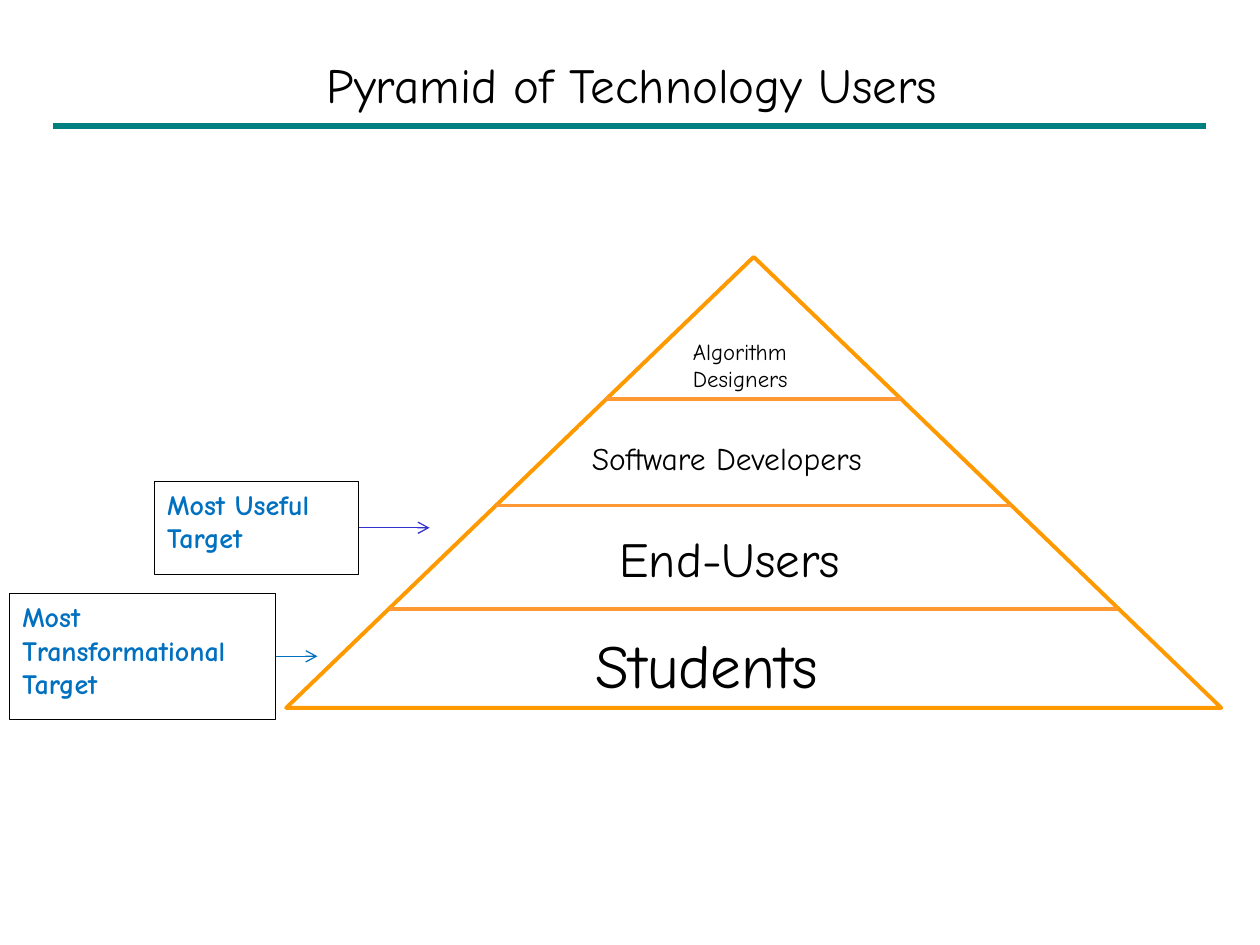
from dataclasses import dataclass

from lxml.etree import SubElement
from pptx import Presentation
from pptx.dml.color import RGBColor
from pptx.enum.shapes import MSO_CONNECTOR, MSO_SHAPE
from pptx.enum.text import MSO_ANCHOR, MSO_AUTO_SIZE, PP_ALIGN
from pptx.oxml.ns import qn
from pptx.util import Cm, Pt


@dataclass(frozen=True)
class Theme:
    font: str = "Comic Neue"
    white: str = "FFFFFF"
    black: str = "000000"
    rule: str = "008080"
    pyramid: str = "FF9900"
    divider: str = "FF9933"
    callout: str = "0070C0"
    useful_arrow: str = "3333CC"
    title_size: float = 28
    callout_size: float = 16


THEME = Theme()

# Pyramid geometry in centimetres
LEFT, TOP, WIDTH, HEIGHT = 5.77, 5.18, 18.85, 9.09
DIVIDER_LEVELS = (8.05, 10.19, 12.27)

# Paragraphs, type size, box (left, top, width, height)
TIERS = (
    (("Students",), 35, (11.76, 12.52, 6.22, 1.47)),
    (("End-Users",), 28, (12.24, 10.52, 5.87, 1.8)),
    (("Algorithm", "Designers"), 13, (13.72, 6.68, 2.64, 1.65)),
    (("Software Developers",), 18, (11.68, 8.61, 6.91, 1.57)),
)

# Text, box, arrow tip, arrow colour
CALLOUTS = (
    ("Most Useful Target", (3.12, 9.7, 4.11, 1.88), 8.66, THEME.useful_arrow),
    ("Most Transformational Target", (0.2, 11.96, 5.36, 2.54), 6.4, THEME.callout),
)


def add_run(paragraph, text, size, color=THEME.black, bold=False):
    run = paragraph.add_run()
    run.text = text
    run.font.name = THEME.font
    run.font.size = Pt(size)
    run.font.bold = bold
    run.font.color.rgb = RGBColor.from_string(color)


def add_outline(slide, preset, box, color, width):
    """Add a white preset shape with a coloured outline."""
    shape = slide.shapes.add_shape(preset, *map(Cm, box))
    shape.shadow.inherit = False
    shape.fill.solid()
    shape.fill.fore_color.rgb = RGBColor.from_string(THEME.white)
    shape.line.color.rgb = RGBColor.from_string(color)
    shape.line.width = Pt(width)
    return shape


def add_box(slide, box, border, lines, size, color=THEME.black, bold=False):
    shape = add_outline(slide, MSO_SHAPE.RECTANGLE, box, border, 0.5)
    frame = shape.text_frame
    frame.word_wrap = True
    frame.vertical_anchor = MSO_ANCHOR.TOP
    for index, line in enumerate(lines):
        paragraph = frame.add_paragraph() if index else frame.paragraphs[0]
        paragraph.alignment = PP_ALIGN.LEFT
        add_run(paragraph, line, size, color, bold)
    return shape


def add_line(slide, start, end, color, width):
    line = slide.shapes.add_connector(MSO_CONNECTOR.STRAIGHT, *map(Cm, start + end))
    line.line.color.rgb = RGBColor.from_string(color)
    line.line.width = Pt(width)
    SubElement(line._element.spPr, qn("a:effectLst"))
    return line


def add_title(slide, text):
    title = slide.shapes.title
    title.left, title.top, title.width, title.height = map(Cm, (0.99, 0.84, 23.5, 1.7))
    frame = title.text_frame
    frame.word_wrap = True
    frame.auto_size = MSO_AUTO_SIZE.NONE
    frame.vertical_anchor = MSO_ANCHOR.MIDDLE
    frame.paragraphs[0].alignment = PP_ALIGN.CENTER
    add_run(frame.paragraphs[0], text, THEME.title_size)


def add_pyramid(slide):
    add_outline(slide, MSO_SHAPE.ISOSCELES_TRIANGLE, (LEFT, TOP, WIDTH, HEIGHT),
                THEME.pyramid, 2.25)
    for lines, size, box in TIERS:
        label = add_box(slide, box, THEME.white, lines, size)
    developers = label.text_frame.paragraphs[0]
    developers.line_spacing = 1.15
    developers.space_after = Pt(10)

    apex = LEFT + WIDTH / 2
    for level in DIVIDER_LEVELS:
        reach = WIDTH / 2 * (level - TOP) / HEIGHT
        add_line(slide, (apex - reach, level), (apex + reach, level), THEME.divider, 2.25)


def add_callout(slide, text, box, tip, arrow_color):
    callout = add_box(slide, box, THEME.black, (text,), THEME.callout_size,
                      THEME.callout, bold=True)
    left, top, width, height = box
    middle = top + height / 2
    arrow = add_line(slide, (left + width, middle), (tip, middle), arrow_color, 0.75)
    arrow.begin_connect(callout, 3)
    SubElement(arrow.line._get_or_add_ln(), qn("a:tailEnd"), type="arrow")


def main():
    presentation = Presentation()
    presentation.slide_width, presentation.slide_height = Cm(25.4), Cm(19.05)
    slide = presentation.slides.add_slide(presentation.slide_layouts[5])
    add_title(slide, "Pyramid of Technology Users")
    add_line(slide, (1.07, 2.54), (24.31, 2.54), THEME.rule, 4)
    add_pyramid(slide)
    for callout in CALLOUTS:
        add_callout(slide, *callout)
    presentation.save("out.pptx")


if __name__ == "__main__":
    main()
